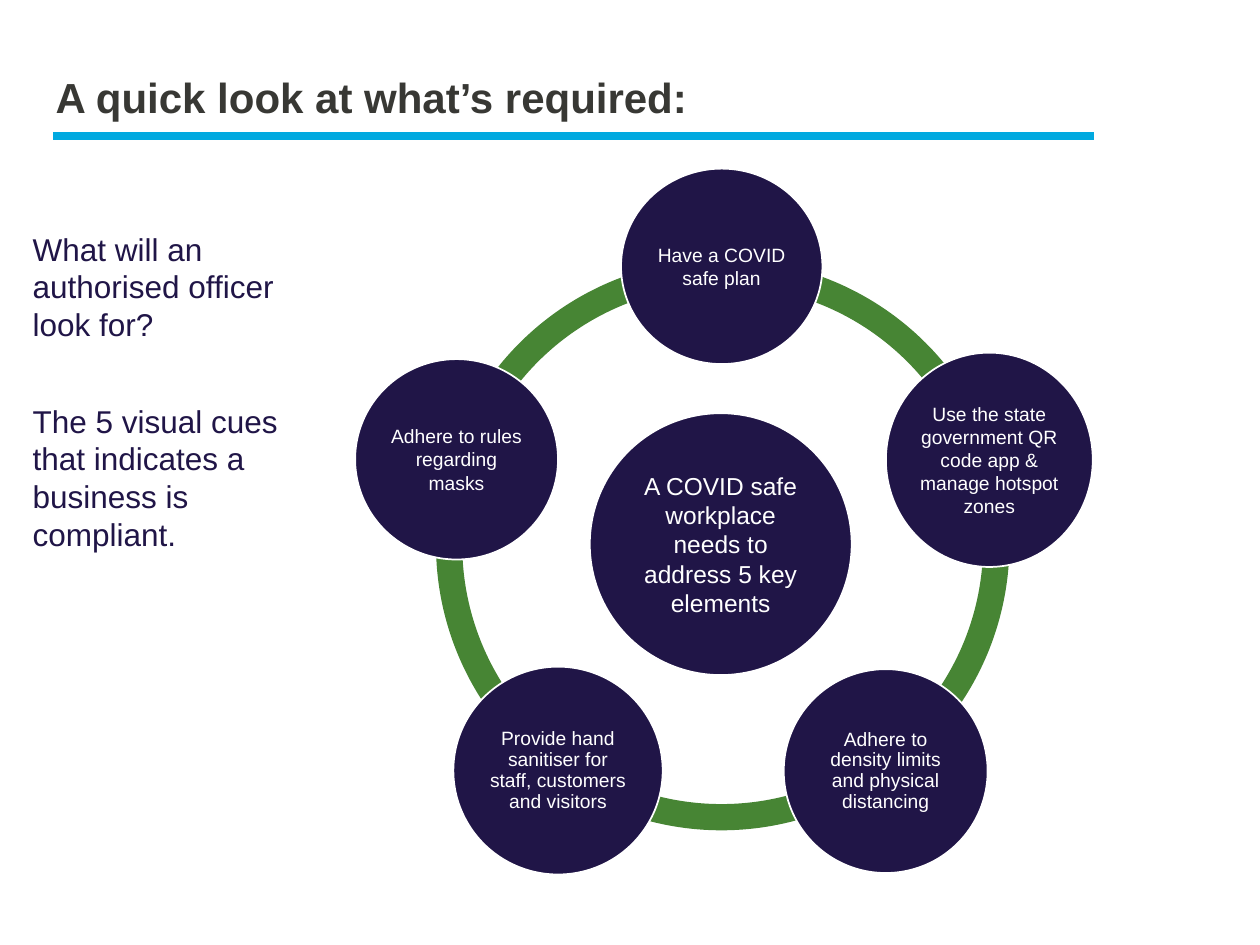
"""Build the slide on the five elements of a COVID safe workplace."""
from pptx import Presentation
from pptx.dml.color import RGBColor
from pptx.enum.shapes import MSO_CONNECTOR, MSO_SHAPE
from pptx.enum.text import MSO_ANCHOR, PP_ALIGN
from pptx.oxml.ns import qn
from pptx.util import Cm, Pt
from lxml import etree

NAVY = RGBColor(0x20, 0x15, 0x47)
GREEN = RGBColor(0x47, 0x85, 0x34)
BLUE = RGBColor(0x00, 0xA9, 0xE0)
CHARCOAL = RGBColor(0x38, 0x38, 0x34)
WHITE = RGBColor(0xFF, 0xFF, 0xFF)


def write(frame, paragraphs, size, color, bold=False, align=PP_ALIGN.LEFT,
          anchor=MSO_ANCHOR.MIDDLE, margins=(0, 0, 0, 0), line_spacing=None, gap=0):
    frame.word_wrap = True
    frame.vertical_anchor = anchor
    frame.margin_left, frame.margin_top, frame.margin_right, frame.margin_bottom = map(Cm, margins)
    for index, text in enumerate(paragraphs):
        paragraph = frame.add_paragraph() if index else frame.paragraphs[0]
        paragraph.alignment = align
        paragraph.line_spacing = line_spacing
        paragraph.space_before = Pt(0)
        paragraph.space_after = Pt(gap if index < len(paragraphs) - 1 else 0)
        run = paragraph.add_run()
        run.text = text
        run.font.name = "Arial"
        run.font.size = Pt(size)
        run.font.bold = bold
        run.font.color.rgb = color


presentation = Presentation()
presentation.slide_width = Cm(25.4)
presentation.slide_height = Cm(19.05)
slide = presentation.slides.add_slide(presentation.slide_layouts[5])

heading = slide.shapes.title
heading.left, heading.top, heading.width, heading.height = Cm(0.41), Cm(0.33), Cm(22.1), Cm(3.38)
write(heading.text_frame, ["A quick look at what’s required:"], 24, CHARCOAL,
      bold=True, margins=(0.71, 0, 0, 0), line_spacing=0.9)

cycle = slide.shapes.add_group_shape().shapes

RING = 11.51
for step, (left, top) in enumerate([(8.79, 5.23), (8.79, 5.23), (8.79, 5.23), (8.84, 5.21), (8.84, 5.23)]):
    start = (198 - 72 * step) % 360
    arc = cycle.add_shape(MSO_SHAPE.BLOCK_ARC, Cm(left), Cm(top), Cm(RING), Cm(RING))
    arc.adjustments[0] = start * 0.6
    arc.adjustments[1] = (start + 72) % 360 * 0.6
    arc.adjustments[2] = 0.046
    arc.shadow.inherit = False
    arc.fill.solid()
    arc.fill.fore_color.rgb = GREEN
    arc.line.fill.background()

elements = [
    ("A COVID safe workplace needs to address 5 key elements", 11.89, 8.33, 5.28, 5.28, 14, None),
    ("Have a COVID safe plan", 12.52, 3.4, 4.06, 3.94, 11, None),
    ("Use the state government QR code app & manage hotspot zones", 17.86, 7.11, 4.17, 4.32, 11, None),
    ("Adhere to density limits and physical distancing", 15.8, 13.49, 4.11, 4.11, 11, 0.9),
    ("Provide hand sanitiser for staff, customers and visitors", 9.14, 13.44, 4.22, 4.19, 11, 0.9),
    ("Adhere to rules regarding masks", 7.16, 7.24, 4.09, 4.04, 11, None),
]
for text, left, top, width, height, size, line_spacing in elements:
    circle = cycle.add_shape(MSO_SHAPE.OVAL, Cm(left), Cm(top), Cm(width), Cm(height))
    circle.shadow.inherit = False
    circle.fill.solid()
    circle.fill.fore_color.rgb = NAVY
    circle.line.color.rgb = WHITE
    circle.line.width = Pt(1)
    write(circle.text_frame, [text], size, WHITE, align=PP_ALIGN.CENTER,
          margins=(0.05, 0.05, 0.05, 0.05), line_spacing=line_spacing)

question = slide.shapes.add_textbox(Cm(0.41), Cm(4.5), Cm(6.15), Cm(12.52))
write(question.text_frame,
      ["What will an authorised officer look for?",
       "The 5 visual cues that indicates a business is compliant."],
      18, NAVY, anchor=MSO_ANCHOR.TOP, margins=(0.25, 0.13, 0.25, 0.13), gap=33.5)

rule = slide.shapes.add_connector(MSO_CONNECTOR.STRAIGHT, Cm(1.07), Cm(2.74), Cm(22.05), Cm(2.74))
rule.line.color.rgb = BLUE
rule.line.width = Pt(5)
etree.SubElement(rule._element.spPr, qn("a:effectLst"))

presentation.save("out.pptx")
